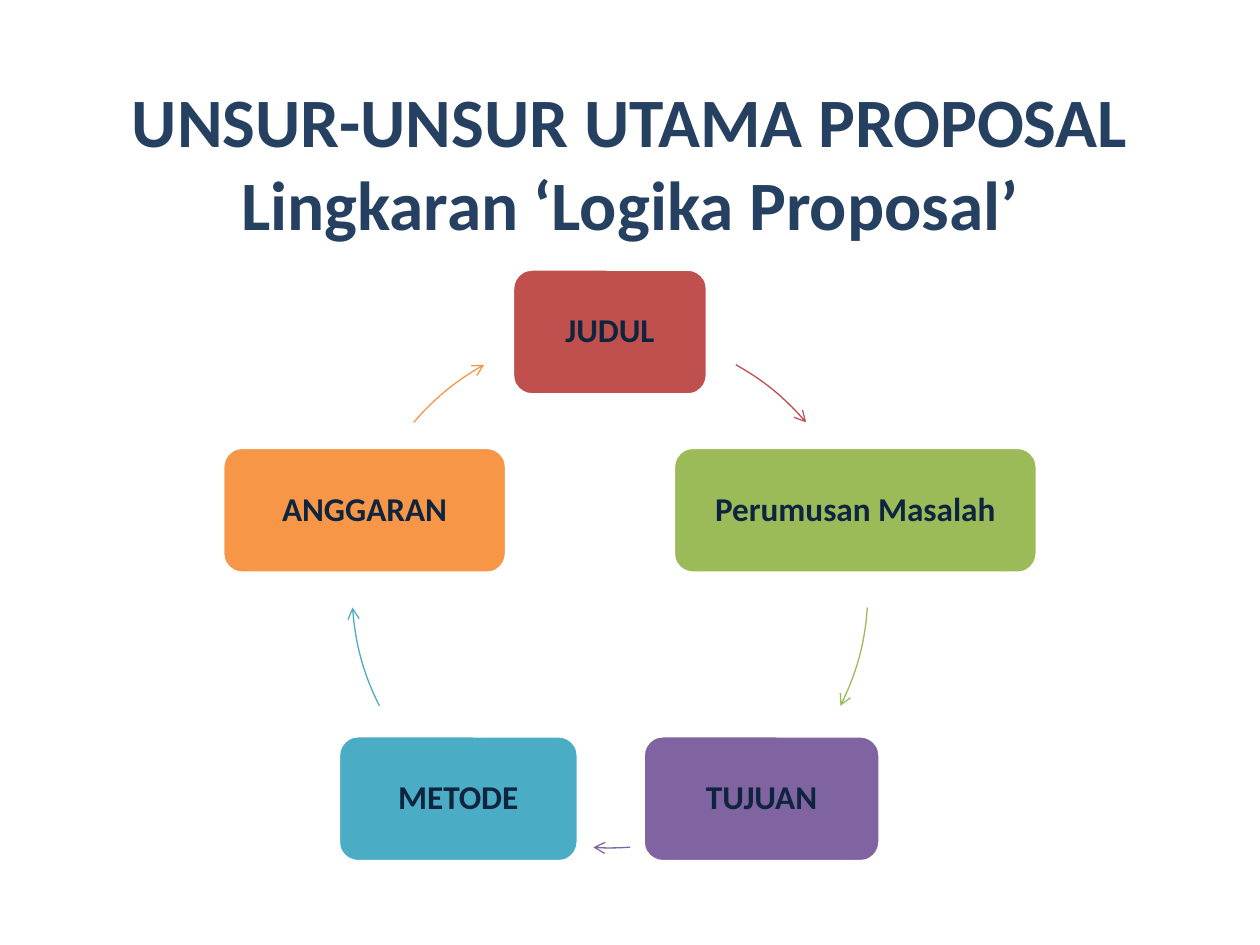
from dataclasses import dataclass
from math import cos, radians, sin

from lxml.etree import SubElement
from pptx import Presentation
from pptx.dml.color import RGBColor
from pptx.enum.shapes import MSO_SHAPE
from pptx.enum.text import MSO_ANCHOR, PP_ALIGN
from pptx.oxml.ns import qn
from pptx.util import Emu, Pt

PX_PER_INCH = 126


def px(length):
    return Emu(round(length * 914400 / PX_PER_INCH))


@dataclass(frozen=True)
class Theme:
    font: str = "Calibri"
    title_size: float = 39.6
    step_size: float = 19
    title_color: str = "254061"
    step_text: str = "0F243E"
    border: str = "FFFFFF"
    red: str = "C0504D"
    green: str = "9BBB59"
    purple: str = "8064A2"
    teal: str = "4BACC6"
    orange: str = "F79646"


class CycleSlide:
    def __init__(self, slide, theme):
        self.shapes = slide.shapes
        self.theme = theme

    def set_text(self, frame, text, size, color):
        frame.word_wrap = True
        frame.vertical_anchor = MSO_ANCHOR.MIDDLE
        paragraph = frame.paragraphs[0]
        paragraph.text = text
        paragraph.alignment = PP_ALIGN.CENTER
        for run in paragraph.runs:
            run.font.name = self.theme.font
            run.font.size = Pt(size)
            run.font.bold = True
            run.font.color.rgb = RGBColor.from_string(color)
        return paragraph

    def title(self, text, left, top, width, height):
        heading = self.shapes.add_textbox(px(left), px(top), px(width), px(height))
        self.set_text(heading.text_frame, text,
                      self.theme.title_size, self.theme.title_color)

    def step(self, text, center_x, center_y, width, height, color):
        box = self.shapes.add_shape(
            MSO_SHAPE.ROUNDED_RECTANGLE, px(center_x - width / 2),
            px(center_y - height / 2), px(width), px(height))
        box.shadow.inherit = False
        box.fill.solid()
        box.fill.fore_color.rgb = RGBColor.from_string(color)
        box.line.color.rgb = RGBColor.from_string(self.theme.border)
        box.line.width = Pt(4.33)
        label = self.set_text(box.text_frame, text,
                              self.theme.step_size, self.theme.step_text)
        label.line_spacing = 0.9

    def arc_arrow(self, center_x, center_y, radius, start, end, color):
        """Draw a clockwise arc; angles are degrees from the top."""
        arc = self.shapes.add_shape(
            MSO_SHAPE.ARC, px(center_x - radius), px(center_y - radius),
            px(2 * radius), px(2 * radius))
        # Arc adjustments count 60000ths of a degree from the right
        for index, angle in enumerate((start, end)):
            arc.adjustments[index] = (angle - 90) % 360 * 0.6
        arc.shadow.inherit = False
        arc.fill.background()
        arc.line.color.rgb = RGBColor.from_string(color)
        arc.line.width = Pt(0.75)
        outline = arc.element.spPr.find(qn("a:ln"))
        SubElement(outline, qn("a:tailEnd"), type="arrow")


def main():
    presentation = Presentation()
    presentation.slide_width = px(1260)
    presentation.slide_height = px(945)
    theme = Theme()
    slide = presentation.slides.add_slide(presentation.slide_layouts[6])
    page = CycleSlide(slide, theme)

    # Heading
    page.title("UNSUR-UNSUR UTAMA PROPOSAL\vLingkaran ‘Logika Proposal’",
               63, 115, 1134, 92)

    # Cycle: each step, its width, and the arc leading to the next step
    center_x, center_y, radius = 610, 590, 258
    step_height = 130
    steps = [
        ("JUDUL", 199, theme.red, 29.2, 49.5),
        ("Perumusan Masalah", 368, theme.green, 93.9, 116.7),
        ("TUJUAN", 241, theme.purple, 175.5, 183.7),
        ("METODE", 244, theme.teal, 243.3, 266.1),
        ("ANGGARAN", 288, theme.orange, 310.5, 330.8),
    ]
    for index, (text, width, color, start, end) in enumerate(steps):
        angle = radians(index * 360 / len(steps))
        page.step(text, center_x + radius * sin(angle),
                  center_y - radius * cos(angle), width, step_height, color)
        page.arc_arrow(center_x, center_y, radius, start, end, color)

    presentation.save("out.pptx")


if __name__ == "__main__":
    main()
